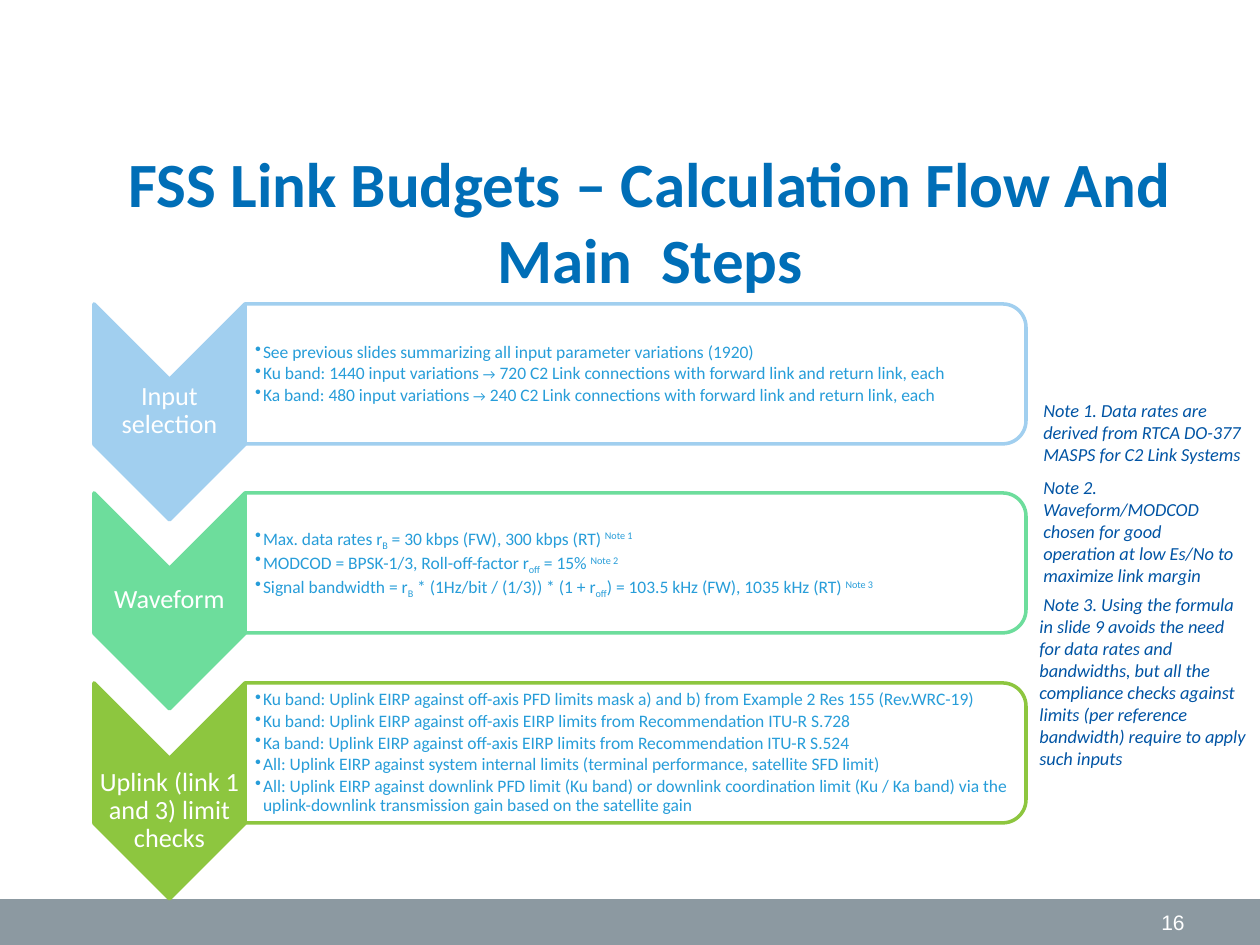
from lxml import etree
from pptx import Presentation, util as u
from pptx.dml.color import RGBColor
from pptx.enum import shapes, text
from pptx.oxml.ns import qn

WHITE = RGBColor(0xFF, 0xFF, 0xFF)
TITLE_BLUE = RGBColor(0x00, 0x6E, 0xB7)
NOTE_BLUE = RGBColor(0x00, 0x54, 0xA4)
BODY_BLUE = RGBColor(0x27, 0x9D, 0xD9)
FOOTER_GREY = RGBColor(0x8C, 0x99, 0xA1)
SKY = RGBColor(0xA1, 0xCF, 0xEF)
MINT = RGBColor(0x6D, 0xDD, 0x9C)
GREEN = RGBColor(0x8D, 0xC6, 0x3F)

SUB, SUP, ARROW = "sub", "sup", "arrow"
BASELINE = {SUB: "-25000", SUP: "30000"}
SMALL_ARROW = ("→", ARROW)

# Step: colour, label, label shift down, bullets (lists of (text, style) runs)
STEPS = [
    (SKY, "Input selection", 0, [
        [("See previous slides summarizing all input parameter variations (1920)", None)],
        [("Ku band: 1440 input variations ", None), SMALL_ARROW,
         (" 720 C2 Link connections with forward link and return link, each", None)],
        [("Ka band: 480 input variations ", None), SMALL_ARROW,
         (" 240 C2 Link connections with forward link and return link, each", None)],
    ]),
    (MINT, "Waveform", 0, [
        [("Max. data rates r", None), ("B", SUB),
         (" = 30 kbps (FW), 300 kbps (RT) ", None), ("Note 1", SUP)],
        [("MODCOD = BPSK-1/3, Roll-off-factor r", None), ("off", SUB),
         (" = 15% ", None), ("Note 2", SUP)],
        [("Signal bandwidth = r", None), ("B", SUB), (" * (1Hz/bit / (1/3)) * (1 + r", None),
         ("off", SUB), (") = 103.5 kHz (FW), 1035 kHz (RT) ", None), ("Note 3", SUP)],
    ]),
    (GREEN, "Uplink (link 1 and 3) limit checks", 21, [
        [("Ku band: Uplink EIRP against off-axis PFD limits mask a) and b) from "
          "Example 2 Res 155 (Rev.WRC-19)", None)],
        [("Ku band: Uplink EIRP against off-axis EIRP limits from Recommendation ITU-R S.728", None)],
        [("Ka band: Uplink EIRP against off-axis EIRP limits from Recommendation ITU-R S.524", None)],
        [("All: Uplink EIRP against system internal limits (terminal performance, "
          "satellite SFD limit)", None)],
        [("All: Uplink EIRP against downlink PFD limit (Ku band) or downlink coordination limit "
          "(Ku / Ka band) via the uplink-downlink transmission gain based on the satellite gain", None)],
    ]),
]
STEP_TOPS = (304, 493, 683)

# Note: left, top, width, height, first-line indent, text
NOTES = [
    (1031, 393, 229, 79, 0,
     "Note 1. Data rates are derived from RTCA DO-377 MASPS for C2 Link Systems"),
    (1031, 470, 215, 123, 0,
     "Note 2. Waveform/MODCOD chosen for good operation at low Es/No to maximize link margin"),
    (1027, 587, 233, 190, 4,
     "Note 3. Using the formula in slide 9 avoids the need for data rates and bandwidths, "
     "but all the compliance checks against limits (per reference bandwidth) require to "
     "apply such inputs"),
]


def px(n):
    return u.Emu(round(n * 914400 / 126))


def style(font, size, color, name="Calibri", bold=False, italic=False):
    font.size, font.name = u.Pt(size), name
    font.color.rgb = color
    font.bold, font.italic = bold, italic


def add_box(slide, x, y, w, h, anchor=text.MSO_ANCHOR.TOP, insets=None):
    """Wrapping text box; insets are left, top, right, bottom."""
    tf = slide.shapes.add_textbox(px(x), px(y), px(w), px(h)).text_frame
    tf.word_wrap = True
    tf.vertical_anchor = anchor
    if insets:
        (tf.margin_left, tf.margin_top,
         tf.margin_right, tf.margin_bottom) = map(px, insets)
    return tf


def add_turned(slide, kind, x, y, w, h, fill, line):
    """Preset turned 90 degrees so that it shows in the given box."""
    sp = slide.shapes.add_shape(kind, px(x + (w - h) / 2), px(y + (h - w) / 2), px(h), px(w))
    sp.rotation = 90
    sp.shadow.inherit = False
    sp.fill.solid()
    sp.fill.fore_color.rgb = fill
    sp.line.color.rgb = line
    sp.line.width = u.Pt(2)
    return sp


def add_title(slide, x, y, w, h):
    sp = slide.shapes.title
    sp.left, sp.top, sp.width, sp.height = map(px, (x, y, w, h))
    tf = sp.text_frame
    tf.text = "FSS Link Budgets – Calculation Flow And Main  Steps"
    tf.word_wrap = True
    tf.auto_size = text.MSO_AUTO_SIZE.NONE
    tf.vertical_anchor = text.MSO_ANCHOR.TOP
    tf.margin_top = px(10)
    p = tf.paragraphs[0]
    p.alignment = text.PP_ALIGN.CENTER
    style(p.runs[0].font, 36, TITLE_BLUE, bold=True)


def add_footer(slide, x, y, w, h):
    bar = slide.shapes.add_shape(shapes.MSO_SHAPE.RECTANGLE, px(x), px(y), px(w), px(h))
    bar.shadow.inherit = False
    bar.fill.solid()
    bar.fill.fore_color.rgb = FOOTER_GREY
    bar.line.fill.background()
    tf = add_box(slide, x + 903, y, 294, h, text.MSO_ANCHOR.MIDDLE)
    tf.text = "16"
    p = tf.paragraphs[0]
    p.alignment = text.PP_ALIGN.RIGHT
    style(p.runs[0].font, 12, WHITE, name="Arial")


def add_bullets(tf, bullets):
    for i, runs in enumerate(bullets):
        p = tf.paragraphs[0] if i == 0 else tf.add_paragraph()
        p.line_spacing = 0.9
        p.space_after = u.Pt(1.5)
        pPr = p._p.get_or_add_pPr()
        pPr.set("marL", str(px(8)))
        pPr.set("indent", str(-px(8)))
        etree.SubElement(pPr, qn("a:buChar")).set("char", "•")
        for words, kind in runs:
            r = p.add_run()
            r.text = words
            style(r.font, 8 if kind == ARROW else 10, BODY_BLUE)
            if kind in BASELINE:
                r._r.get_or_add_rPr().set("baseline", BASELINE[kind])


def add_step(slide, x, y, w, h, color, label, drop, bullets):
    """Chevron with a label on the left, rounded panel of bullets on the right."""
    chevron_w = 151
    add_turned(slide, shapes.MSO_SHAPE.CHEVRON, x, y, chevron_w, h, color, color)
    tf = add_box(slide, x, y + 75 + drop, chevron_w, 64, text.MSO_ANCHOR.MIDDLE, (1, 1, 1, 1))
    tf.text = label
    p = tf.paragraphs[0]
    p.alignment = text.PP_ALIGN.CENTER
    p.line_spacing = 0.9
    style(p.runs[0].font, 15, WHITE)

    panel_x, panel_w, panel_h = x + chevron_w, w - chevron_w, 140
    add_turned(slide, shapes.MSO_SHAPE.ROUND_2_SAME_RECTANGLE,
               panel_x, y, panel_w, panel_h, WHITE, color)
    tf = add_box(slide, panel_x, y + 7, panel_w - 6, panel_h - 14,
                 text.MSO_ANCHOR.MIDDLE, (10, 1, 1, 1))
    add_bullets(tf, bullets)


def add_note(slide, x, y, w, h, indent, words):
    tf = add_box(slide, x, y, w, h)
    tf.text = words
    p = tf.paragraphs[0]
    p._p.get_or_add_pPr().set("indent", str(px(indent)))
    style(p.runs[0].font, 10.5, NOTE_BLUE, italic=True)


def main():
    prs = Presentation()
    prs.slide_width, prs.slide_height = px(1260), px(945)
    slide = prs.slides.add_slide(prs.slide_layouts[5])
    add_footer(slide, 0, 899, 1260, 46)
    add_title(slide, 78, 135, 1144, 79)
    for top, step in zip(STEP_TOPS, STEPS):
        add_step(slide, 94, top, 932, 216, *step)
    for note in NOTES:
        add_note(slide, *note)
    prs.save("out.pptx")


if __name__ == "__main__":
    main()
